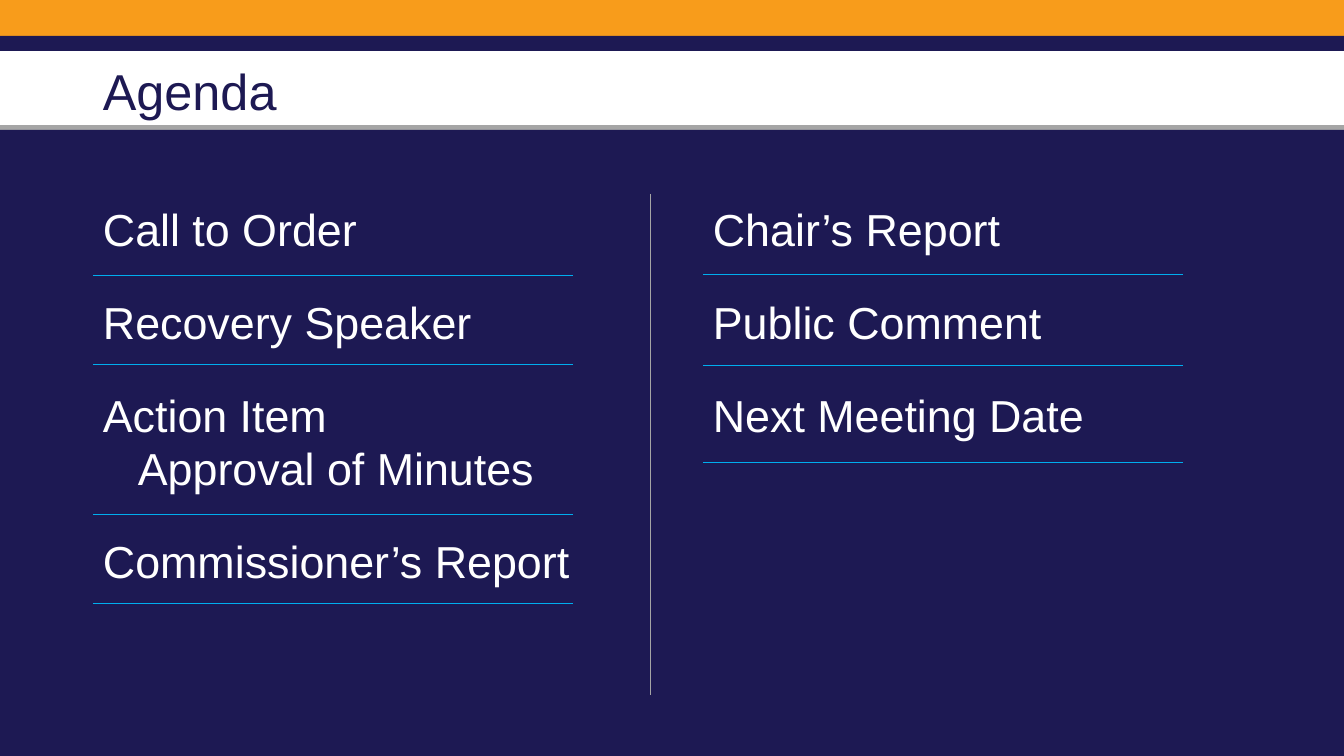
from typing import NamedTuple

from lxml.etree import SubElement
from pptx import Presentation
from pptx.dml.color import RGBColor
from pptx.enum.shapes import MSO_CONNECTOR, MSO_SHAPE
from pptx.enum.text import MSO_ANCHOR
from pptx.oxml.ns import qn
from pptx.slide import Slide
from pptx.util import Emu, Pt

COLORS = {"orange": "F89C1B", "navy": "1D1953", "gray": "A5A5A5",
          "white": "FFFFFF", "cyan": "00ADEE"}
WIDTH, HEIGHT = 1344, 756
RULE_LENGTH = 480
SUBITEM_INDENT = 35


class Band(NamedTuple):
    top: int
    height: int
    color: str


class Item(NamedTuple):
    text: str
    subitem: bool = False
    has_subitem: bool = False


class Column(NamedTuple):
    left: int
    width: int
    height: int
    items: list[Item]
    rules: list[int]


BANDS = [
    Band(0, 40, "orange"),
    Band(36, 15, "navy"),
    Band(125, 6, "gray"),
    Band(130, 626, "navy"),
]
COLUMN_TOP = 194
COLUMNS = [
    Column(703, 548, 480,
           [Item("Chair’s Report"), Item("Public Comment"), Item("Next Meeting Date")],
           [274, 365, 462]),
    Column(93, 518, 572,
           [Item("Call to Order"), Item("Recovery Speaker"),
            Item("Action Item", has_subitem=True),
            Item("Approval of Minutes", subitem=True),
            Item("Commissioner’s Report")],
           [275, 364, 514, 603]),
]


def px(n: int) -> Emu:
    return Emu(round(n * 914400 / 100.8))


def rgb(name: str) -> RGBColor:
    return RGBColor.from_string(COLORS[name])


def add_band(s: Slide, band: Band) -> None:
    sp = s.shapes.add_shape(MSO_SHAPE.RECTANGLE, 0, px(band.top), px(WIDTH), px(band.height))
    sp.shadow.inherit = False
    sp.fill.solid()
    sp.fill.fore_color.rgb = rgb(band.color)
    sp.line.fill.background()


def add_line(s: Slide, x1: int, y1: int, x2: int, y2: int, color: str) -> None:
    line = s.shapes.add_connector(MSO_CONNECTOR.STRAIGHT, px(x1), px(y1), px(x2), px(y2))
    line.line.color.rgb = rgb(color)
    line.line.width = Pt(0.5)
    SubElement(line._element.spPr, qn("a:effectLst"))


def add_frame(s: Slide, left: int, top: int, width: int, height: int, **settings):
    """Add a wrapping text box and return its text frame."""
    tf = s.shapes.add_textbox(px(left), px(top), px(width), px(height)).text_frame
    for name, value in {"word_wrap": True, **settings}.items():
        setattr(tf, name, value)
    return tf


def write(p, text: str, size: int, color: str, **settings) -> None:
    """Fill a paragraph with one run and apply the paragraph settings."""
    for name, value in settings.items():
        setattr(p, name, value)
    r = p.add_run()
    r.text = text
    for name, value in {"name": "Arial", "size": Pt(size)}.items():
        setattr(r.font, name, value)
    r.font.color.rgb = rgb(color)


def add_column(s: Slide, column: Column) -> None:
    tf = add_frame(s, column.left, COLUMN_TOP, column.width, column.height,
                   margin_top=px(8))
    for i, item in enumerate(column.items):
        p = tf.add_paragraph() if i else tf.paragraphs[0]
        write(p, item.text, 32, "white", line_spacing=Pt(38.3),
              space_before=Pt(0 if item.subitem else 10),
              space_after=Pt(0 if item.has_subitem else 18))
        if item.subitem:
            p._p.get_or_add_pPr().set("marL", str(px(SUBITEM_INDENT)))
    for y in column.rules:
        add_line(s, column.left, y, column.left + RULE_LENGTH, y, "cyan")


def main() -> None:
    prs = Presentation()
    prs.slide_width, prs.slide_height = px(WIDTH), px(HEIGHT)
    s = prs.slides.add_slide(prs.slide_layouts[6])
    for band in BANDS:
        add_band(s, band)
    for column in COLUMNS:
        add_column(s, column)
    title = add_frame(s, 93, 21, 1202, 146, vertical_anchor=MSO_ANCHOR.MIDDLE)
    write(title.paragraphs[0], "Agenda", 36, "navy", line_spacing=0.9)
    add_line(s, 650, COLUMN_TOP, 650, 695, "gray")
    prs.save("out.pptx")


if __name__ == "__main__":
    main()
